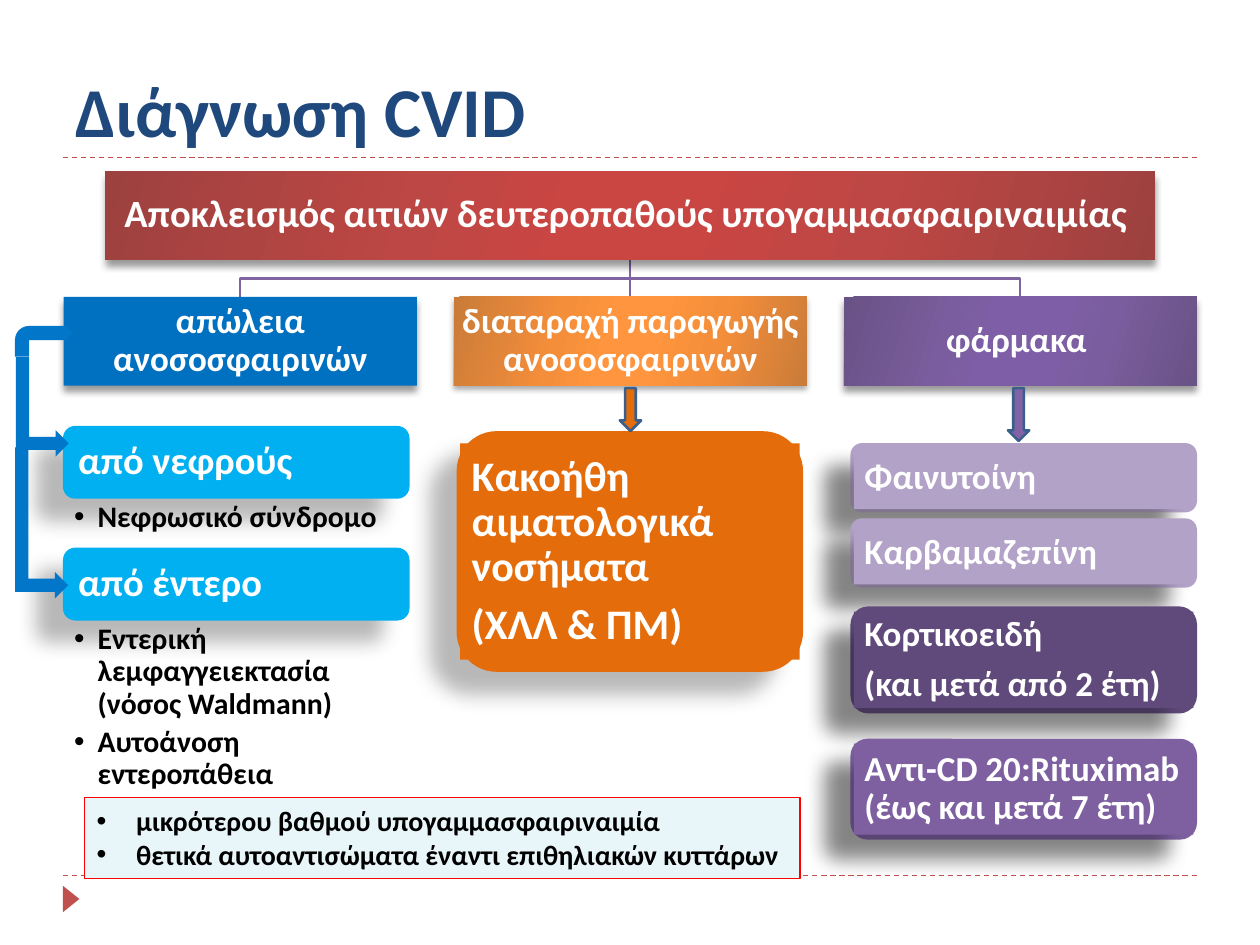
from pptx import Presentation
from pptx.dml.color import RGBColor
from pptx.enum.dml import MSO_LINE
from pptx.enum.shapes import MSO_CONNECTOR, MSO_SHAPE
from pptx.enum.text import MSO_ANCHOR, PP_ALIGN
from pptx.oxml.ns import qn
from pptx.util import Pt
from lxml import etree

RECT, ROUND = MSO_SHAPE.RECTANGLE, MSO_SHAPE.ROUNDED_RECTANGLE
DOWN, BENT, UP = MSO_SHAPE.DOWN_ARROW, MSO_SHAPE.BENT_ARROW, MSO_SHAPE.BENT_UP_ARROW
TOP, MID, LOW = MSO_ANCHOR.TOP, MSO_ANCHOR.MIDDLE, MSO_ANCHOR.BOTTOM
LEFT, MIDDLE = PP_ALIGN.LEFT, PP_ALIGN.CENTER
TRI, STRAIGHT, DASH = MSO_SHAPE.ISOSCELES_TRIANGLE, MSO_CONNECTOR.STRAIGHT, MSO_LINE.DASH

WHITE, BLACK = RGBColor(255, 255, 255), RGBColor(0, 0, 0)
NAVY, BLUE = RGBColor(0x1F, 0x49, 0x7D), RGBColor(0, 0x70, 0xC0)
SKY, ARROW = RGBColor(0, 0xB0, 0xF0), RGBColor(0x02, 0x76, 0xC9)
EDGE, RUST = RGBColor(0x3A, 0x5F, 0x8C), RGBColor(0xC0, 0x50, 0x4D)
ORANGE, RED = RGBColor(0xE4, 0x6C, 0x0A), RGBColor(255, 0, 0)
LILAC, PLUM = RGBColor(0xB3, 0xA2, 0xC7), RGBColor(0x60, 0x4A, 0x7B)
VIOLET, STEM = RGBColor(0x7E, 0x60, 0xA1), RGBColor(0x80, 0x64, 0xA2)
GRAPE, PALE = RGBColor(0x81, 0x62, 0xA5), RGBColor(0xE8, 0xF5, 0xF9)

# Gradients run from edge to centre and back
REDS = [RGBColor(0x9D, 0x41, 0x3F), RGBColor(0xBD, 0x47, 0x44), RGBColor(0xCA, 0x46, 0x43)]
AMBERS = [RGBColor(0xCA, 0x7B, 0x39), RGBColor(0xF4, 0x8E, 0x3A), RGBColor(0xFF, 0x95, 0x3E)]
PURPLES = [RGBColor(0x69, 0x52, 0x85), RGBColor(0x7A, 0x5D, 0x9E), RGBColor(0x7F, 0x5E, 0xA8)]
STOPS = ((0, 0), (30, 1), (45, 2), (55, 2), (73, 1), (100, 0))

# Shadows: opacity %, blur, distance, angle
DROP, SOFT, FAR = (40, 4, 3.4, 90), (32, 3.5, 2.2, 90), (28, 11.8, 19.7, 141)

deck = Presentation()
deck.slide_width, deck.slide_height = Pt(720), Pt(540)
slide = deck.slides.add_slide(deck.slide_layouts[6])
shapes = slide.shapes


def box(kind, x, y, w, h, fill, shade=None, line=None, width=1.5):
    shape = shapes.add_shape(kind, Pt(x), Pt(y), Pt(w), Pt(h))
    shape.shadow.inherit = False
    props = shape._element.spPr
    if isinstance(fill, list):
        shape.fill.gradient()
        shape.fill.gradient_angle = 344
        stops = props.find(qn("a:gradFill")).find(qn("a:gsLst"))
        for old in list(stops):
            stops.remove(old)
        for pos, tone in STOPS:
            stop = etree.SubElement(stops, qn("a:gs"), pos=str(pos * 1000))
            etree.SubElement(stop, qn("a:srgbClr"), val=str(fill[tone]))
    else:
        shape.fill.solid()
        shape.fill.fore_color.rgb = fill
    if line is None:
        shape.line.fill.background()
    else:
        shape.line.color.rgb = line
        shape.line.width = Pt(width)
    if shade:
        alpha, blur, dist, angle = shade
        cast = etree.SubElement(
            props.find(qn("a:effectLst")), qn("a:outerShdw"),
            blurRad=str(Pt(blur)), dist=str(Pt(dist)),
            dir=str(angle * 60000), rotWithShape="0")
        tint = etree.SubElement(cast, qn("a:srgbClr"), val="000000")
        etree.SubElement(tint, qn("a:alpha"), val=str(alpha * 1000))
    return shape


def write(shape, lines, size, color=WHITE, align=LEFT, anchor=MID,
          pads=(7.2, 3.6, 7.2, 3.6), gap=0, lead=0.9, dent=0):
    frame = shape.text_frame
    frame.word_wrap = True
    frame.vertical_anchor = anchor
    (frame.margin_left, frame.margin_top,
     frame.margin_right, frame.margin_bottom) = [Pt(pad) for pad in pads]
    frame.text = "\n".join(lines)
    for para in frame.paragraphs:
        para.alignment = align
        para.line_spacing = lead
        para.space_after = Pt(gap)
        if dent:
            props = para._p.get_or_add_pPr()
            props.set("marL", str(Pt(dent)))
            props.set("indent", str(-Pt(dent)))
            etree.SubElement(props, qn("a:buFont"), typeface="Arial")
            etree.SubElement(props, qn("a:buChar"), char="•")
        for run in para.runs:
            font = run.font
            font.name, font.size, font.bold = "Calibri", Pt(size), True
            font.color.rgb = color


# Dashed rules and corner mark
for y in (500.4, 90):
    rule = shapes.add_connector(STRAIGHT, Pt(36), Pt(y), Pt(684), Pt(y))
    rule.line.color.rgb = RUST
    rule.line.width = Pt(0.75)
    rule.line.dash_style = DASH
    etree.SubElement(rule._element.spPr, qn("a:effectLst"))
mark = box(TRI, 33.1, 509, 15.1, 9.4, RUST)
mark.rotation = 90

# Title
title = shapes.add_textbox(Pt(36), Pt(12.2), Pt(648), Pt(77.8))
write(title, ["Διάγνωση CVID"], 40, NAVY, anchor=LOW, lead=1)

# Tree lines
for x in (582.8, 360, 137.2):
    path = shapes.build_freeform(Pt(360), Pt(148.5), scale=1.0)
    spots = [(360, 170)] if x == 360 else [(360, 159), (x, 159), (x, 170)]
    path.add_line_segments([(Pt(a), Pt(b)) for a, b in spots], close=False)
    branch = path.convert_to_shape()
    branch.shadow.inherit = False
    branch.fill.background()
    branch.line.color.rgb = STEM
    branch.line.width = Pt(1.5)

# Tree boxes
root = box(RECT, 60, 97.8, 600, 50.7, REDS, DROP)
write(root, ["Αποκλεισμός αιτιών δευτεροπαθούς υπογαμμασφαιριναιμίας "], 22,
      align=MIDDLE, pads=(1.4,) * 4)
heads = [("απώλεια ανοσοσφαιρινών", BLUE, DROP),
         ("διαταραχή παραγωγής ανοσοσφαιρινών", AMBERS, SOFT),
         ("φάρμακα ", PURPLES, DROP)]
for i, (text, fill, shade) in enumerate(heads):
    head = box(RECT, 36.4 + 222.9 * i, 169.7, 201.8, 50.7, fill, shade)
    write(head, [text], 20, align=MIDDLE, pads=(0.7,) * 4)

# Loss causes with their bullets
losses = [(243.4, "από νεφρούς", 28.8, ["Νεφρωσικό σύνδρομο"]),
          (313, "από έντερο", 102.2, ["Εντερική λεμφαγγειεκτασία (νόσος Waldmann)",
                                       "Αυτοάνοση εντεροπάθεια"])]
for y, text, h, notes in losses:
    card = box(ROUND, 36, y, 198, 41.6, SKY, FAR)
    write(card, [text], 22, pads=(6.6,) * 4)
    body = shapes.add_textbox(Pt(36), Pt(y + 41.4), Pt(198), Pt(h))
    write(body, notes, 17, BLACK, anchor=TOP, pads=(6.3, 2.2, 12.2, 2.2),
          gap=3.4, dent=13.5)

# Cards with an inner text plate
cards = [
    (260.9, 246.4, 137.5, 7, ORANGE, None, 24, 6.6,
     ["Κακοήθη αιματολογικά νοσήματα", "(ΧΛΛ & ΠΜ)"]),
    (486, 253.2, 39.6, 1.9, LILAC, FAR, 20, 6, ["Φαινυτοίνη"]),
    (486, 296.2, 39.6, 1.9, LILAC, FAR, 20, 6, ["Καρβαμαζεπίνη"]),
    (486, 346.5, 61.2, 3, PLUM, FAR, 20, 6, ["Κορτικοειδή", "(και μετά από 2 έτη)"]),
    (486, 422.2, 57.6, 2.8, VIOLET, FAR, 20, 6,
     ["Αντι-CD 20:Rituximab (έως και μετά 7 έτη)"]),
]
for x, y, h, rim, fill, shade, size, pad, lines in cards:
    box(ROUND, x, y, 198, h, fill, FAR)
    plate = box(RECT, x + 2, y + rim, 194, h - 2 * rim, fill, shade)
    write(plate, lines, size, pads=(pad,) * 4, gap=7)

# Arrows
for x, y, w in ((-4.3, 217.4, 56.9), (-19.4, 283.7, 86.4)):
    turn = box(UP, x, y, w, 30.2, ARROW)
    turn.rotation = 90
bend = box(BENT, 8.6, 185.8, 33.1, 18, ARROW)
for i, part in enumerate((0.45, 0.25, 0.25, 0.44)):
    bend.adjustments[i] = part
box(DOWN, 354.2, 221.8, 12.2, 24.5, ORANGE, line=EDGE)
box(DOWN, 576, 221.8, 12.2, 30.2, GRAPE, line=EDGE)

# Note at the foot
note = box(RECT, 48.2, 455.8, 409, 46.1, PALE, line=RED, width=0.75)
write(note, ["μικρότερου βαθμού υπογαμμασφαιριναιμία",
             "θετικά αυτοαντισώματα έναντι επιθηλιακών κυττάρων"],
      16, BLACK, anchor=TOP, lead=1, dent=22.5)

deck.save("out.pptx")
